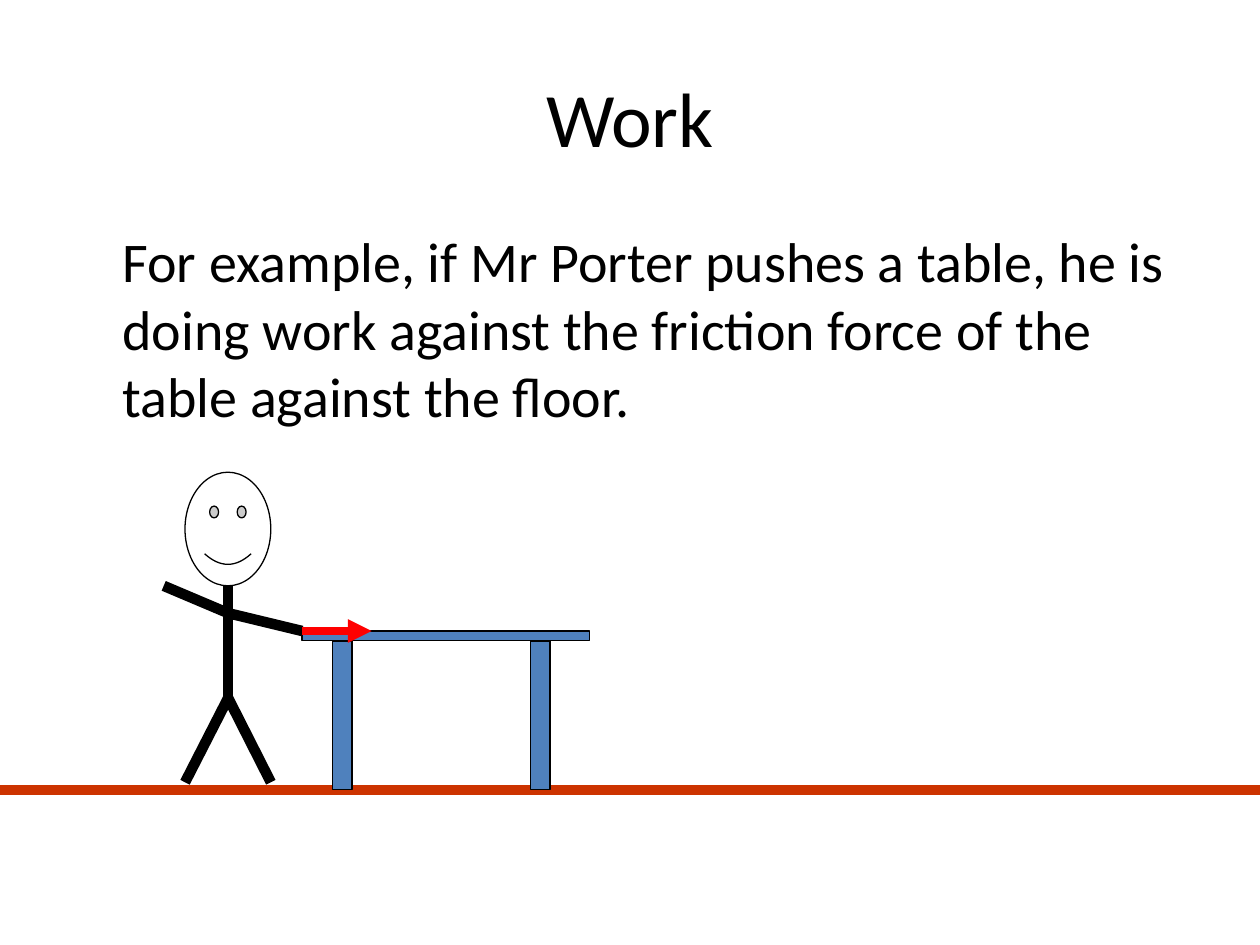
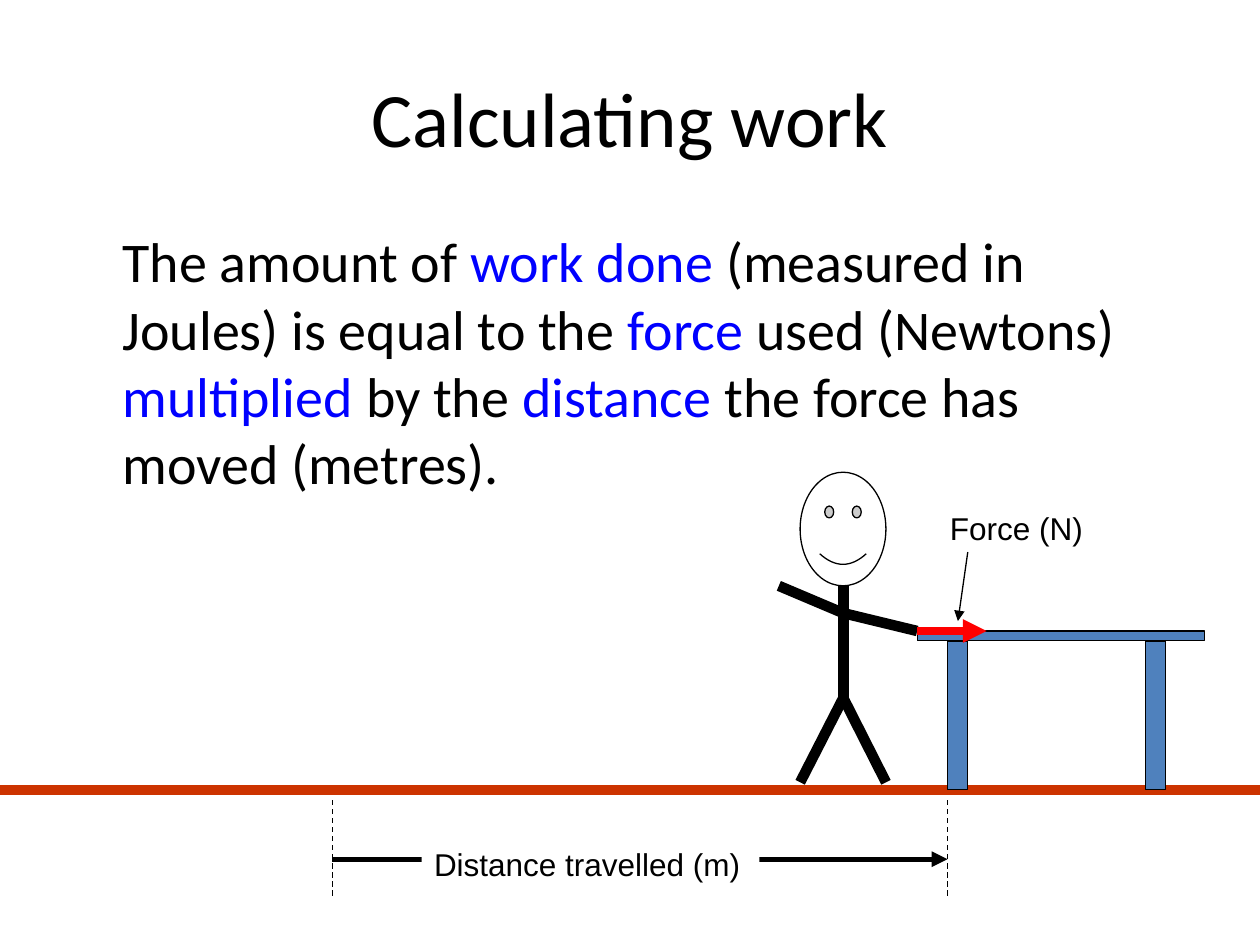
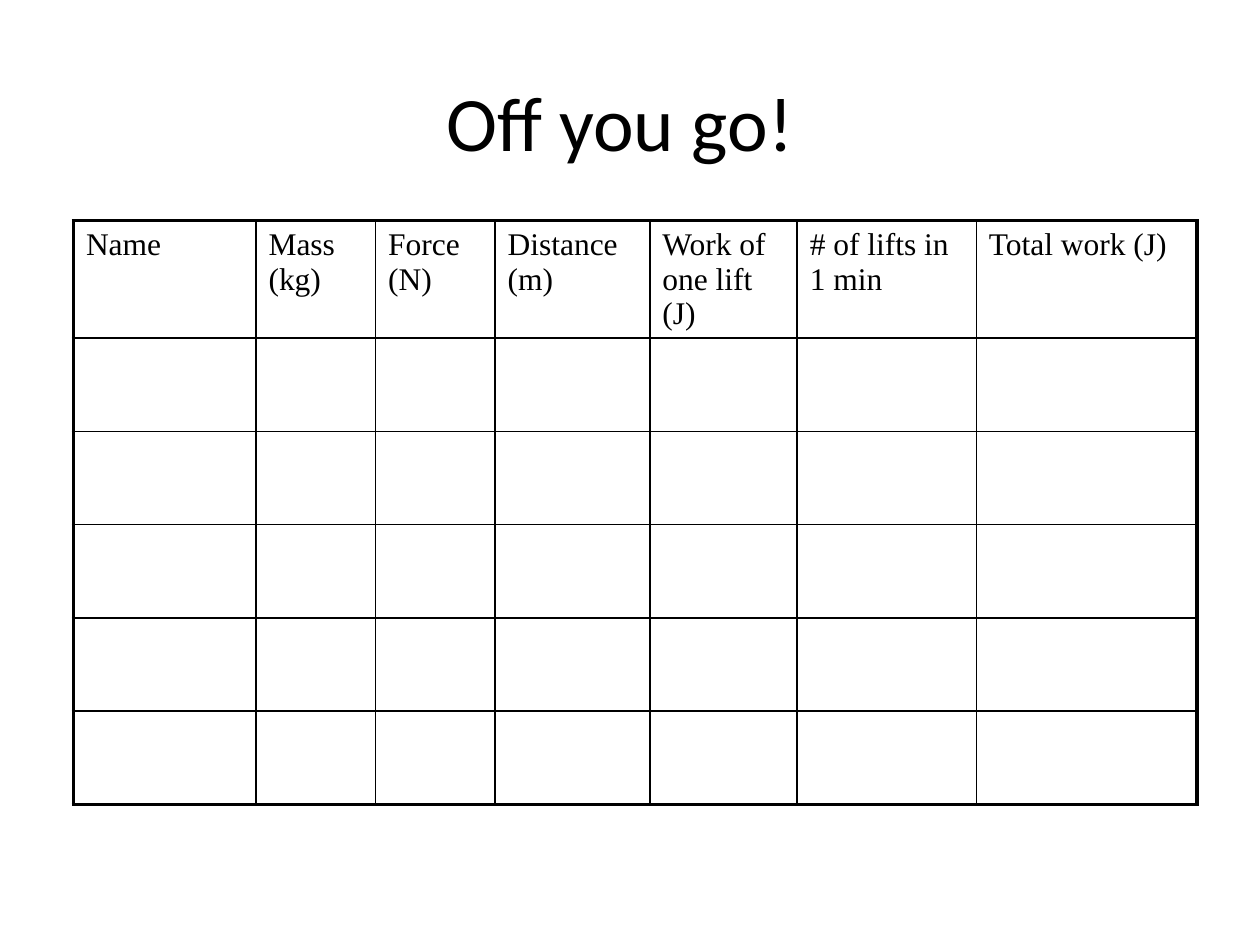
from lxml.etree import SubElement
from pptx import Presentation
from pptx.dml.color import RGBColor
from pptx.enum.dml import MSO_LINE
from pptx.enum.shapes import MSO_CONNECTOR, MSO_SHAPE
from pptx.enum.text import MSO_ANCHOR, PP_ALIGN
from pptx.oxml.ns import qn
from pptx.util import Cm, Pt

BLACK, WHITE = "000000", "FFFFFF"
ACCENT, TABLE_BLUE, FLOOR, FORCE = "0000FF", "4F81BD", "CC3300", "FF0000"
SLIDE_W, SLIDE_H = 25.4, 19.05
FLOOR_Y = 15.93
PUSHER_TOP = 9.52
START_X, END_X = 3.3, 15.7
HAND_X, HAND_Y = 2.79, 3.2  # from the pusher's left and top
LEG_X = HAND_X + 0.61
HEADINGS = ["Name", "Mass (kg)", "Force (N)", "Distance (m)",
            "Work of one lift (J)", "# of lifts in 1 min", "Total work (J)"]
COLUMNS = [3.68, 2.41, 2.41, 3.12, 2.97, 3.61, 4.45]


def rgb(color):
    return RGBColor.from_string(color)


def write(tf, text, font="Calibri", size=32, align=PP_ALIGN.LEFT,
          anchor=MSO_ANCHOR.TOP, indent=0):
    """Write one paragraph; words between asterisks take the accent colour."""
    tf.word_wrap = True
    tf.vertical_anchor = anchor
    p = tf.paragraphs[0]
    p.alignment = align
    if indent:
        pPr = p._p.get_or_add_pPr()
        pPr.set("marL", str(Cm(indent)))
        pPr.set("indent", "0")
    for i, piece in enumerate(text.split("*")):
        r = p.add_run()
        r.text = piece
        r.font.name, r.font.size = font, Pt(size)
        r.font.color.rgb = rgb(ACCENT if i % 2 else BLACK)


def add_text(slide, text, left, top, width, height, fill=None, **fmt):
    sp = slide.shapes.add_textbox(Cm(left), Cm(top), Cm(width), Cm(height))
    if fill:
        sp.fill.solid()
        sp.fill.fore_color.rgb = rgb(fill)
    write(sp.text_frame, text, **fmt)


def add_shape(shapes, kind, left, top, width, height, fill):
    sp = shapes.add_shape(kind, Cm(left), Cm(top), Cm(width), Cm(height))
    sp.shadow.inherit = False
    sp.fill.solid()
    sp.fill.fore_color.rgb = rgb(fill)
    sp.line.color.rgb = rgb(BLACK)
    sp.line.width = Pt(0.75)
    return sp


def add_line(shapes, x1, y1, x2, y2, color=BLACK, width=0.75, dash=None, arrow=False):
    line = shapes.add_connector(MSO_CONNECTOR.STRAIGHT, Cm(x1), Cm(y1), Cm(x2), Cm(y2))
    line.line.color.rgb = rgb(color)
    line.line.width = Pt(width)
    if dash:
        line.line.dash_style = dash
    spPr = line.element.spPr
    if arrow:
        SubElement(spPr.find(qn("a:ln")), qn("a:tailEnd"), type="triangle")
    SubElement(spPr, qn("a:effectLst"))


def add_slide(prs, title, left=1.27, top=0.76, width=22.86):
    slide = prs.slides.add_slide(prs.slide_layouts[5])
    sp = slide.shapes.title
    sp.left, sp.top, sp.width, sp.height = Cm(left), Cm(top), Cm(width), Cm(3.18)
    write(sp.text_frame, title, size=44, align=PP_ALIGN.CENTER, anchor=MSO_ANCHOR.MIDDLE)
    return slide


def add_desk(slide, left, top):
    shapes = slide.shapes.add_group_shape().shapes
    for x in (0.61, 4.6):
        add_shape(shapes, MSO_SHAPE.RECTANGLE, left + x, top + 0.2, 0.4, 3, TABLE_BLUE)
    add_shape(shapes, MSO_SHAPE.RECTANGLE, left, top, 5.79, 0.2, TABLE_BLUE)


def add_person(slide, left, top):
    shapes = slide.shapes.add_group_shape().shapes
    face = add_shape(shapes, MSO_SHAPE.SMILEY_FACE, left + 0.43, top, 1.73, 2.29, WHITE)
    face.adjustments[0] = 0.047
    neck, shoulder, hip = (1.3, 2.29), (1.3, 2.84), (1.3, 4.55)
    limbs = [(neck, hip), (hip, (0.43, 6.25)), (hip, (2.16, 6.25)),
             (shoulder, (HAND_X, HAND_Y)), (shoulder, (0, 2.29))]
    for (x1, y1), (x2, y2) in limbs:
        add_line(shapes, left + x1, top + y1, left + x2, top + y2, width=6)


def add_pushing_scene(slide, left, top=PUSHER_TOP):
    add_line(slide.shapes, 0, FLOOR_Y, SLIDE_W, FLOOR_Y, FLOOR, 6)
    x, y = left + HAND_X, top + HAND_Y
    add_desk(slide, x, y)
    add_person(slide, left, top)
    add_line(slide.shapes, x, y, x + 1.4, y, FORCE, 4.5, arrow=True)


def add_force_label(slide, left, top):
    add_text(slide, "Force (N)", left, top, 5.59, 1.02, font="Arial", size=18)
    add_line(slide.shapes, left + 0.61, top + 1, left + 0.41, top + 2.39, arrow=True)


def add_distance_marker(slide, start, end, top):
    for x in (start, end):
        add_line(slide.shapes, x, top, x, top + 2, dash=MSO_LINE.DASH)
    add_line(slide.shapes, start, top + 1.19, end, top + 1.19, width=3, arrow=True)
    add_text(slide, "Distance travelled (m)", start + 1.8, top + 0.79, 6.81, 1.02,
             fill=WHITE, font="Arial", size=18)


def add_border(cell, side, width):
    ln = SubElement(cell._tc.get_or_add_tcPr(), qn(f"a:ln{side}"), w=str(Pt(width)))
    SubElement(SubElement(ln, qn("a:solidFill")), qn("a:srgbClr"), val=BLACK)


def add_results_table(slide, left, top, rows=6, row_height=1.88):
    last_row, last_col = rows - 1, len(COLUMNS) - 1
    table = slide.shapes.add_table(rows, len(COLUMNS), Cm(left), Cm(top),
                                   Cm(sum(COLUMNS)), Cm(rows * row_height)).table
    table.first_row = table.horz_banding = False
    for column, width in zip(table.columns, COLUMNS):
        column.width = Cm(width)
    for i in range(rows):
        for j, heading in enumerate(HEADINGS):
            cell = table.cell(i, j)
            outer = {"L": j == 0, "R": j == last_col, "T": i == 0, "B": i == last_row}
            for side, thick in outer.items():
                add_border(cell, side, 2.25 if thick else 1)
            cell.fill.background()
            if i == 0:
                write(cell.text_frame, heading, font="Times New Roman", size=18)


def add_example_slide(prs, title, body, pusher_left):
    slide = add_slide(prs, title)
    add_text(slide, body, 1.27, 4.45, 22.86, 12.57, indent=0.95)
    add_pushing_scene(slide, pusher_left)
    return slide


def main():
    prs = Presentation()
    prs.slide_width, prs.slide_height = Cm(SLIDE_W), Cm(SLIDE_H)

    add_example_slide(
        prs, "Work",
        "For example, if Mr Porter pushes a table, he is doing work against "
        "the friction force of the table against the floor.", START_X)

    slide = add_example_slide(
        prs, "Calculating work",
        "The amount of *work done* (measured in Joules) is equal to the *force* used "
        "(Newtons) *multiplied* by the *distance* the force has moved (metres).", END_X)
    add_distance_marker(slide, START_X + LEG_X, END_X + LEG_X, FLOOR_Y + 0.2)
    add_force_label(slide, END_X + 3.2, PUSHER_TOP + 0.61)

    slide = add_slide(prs, "Off you go!", 1.7, 0.84, 21.59)
    add_results_table(slide, 1.48, 4.45)

    prs.save("out.pptx")


if __name__ == "__main__":
    main()
